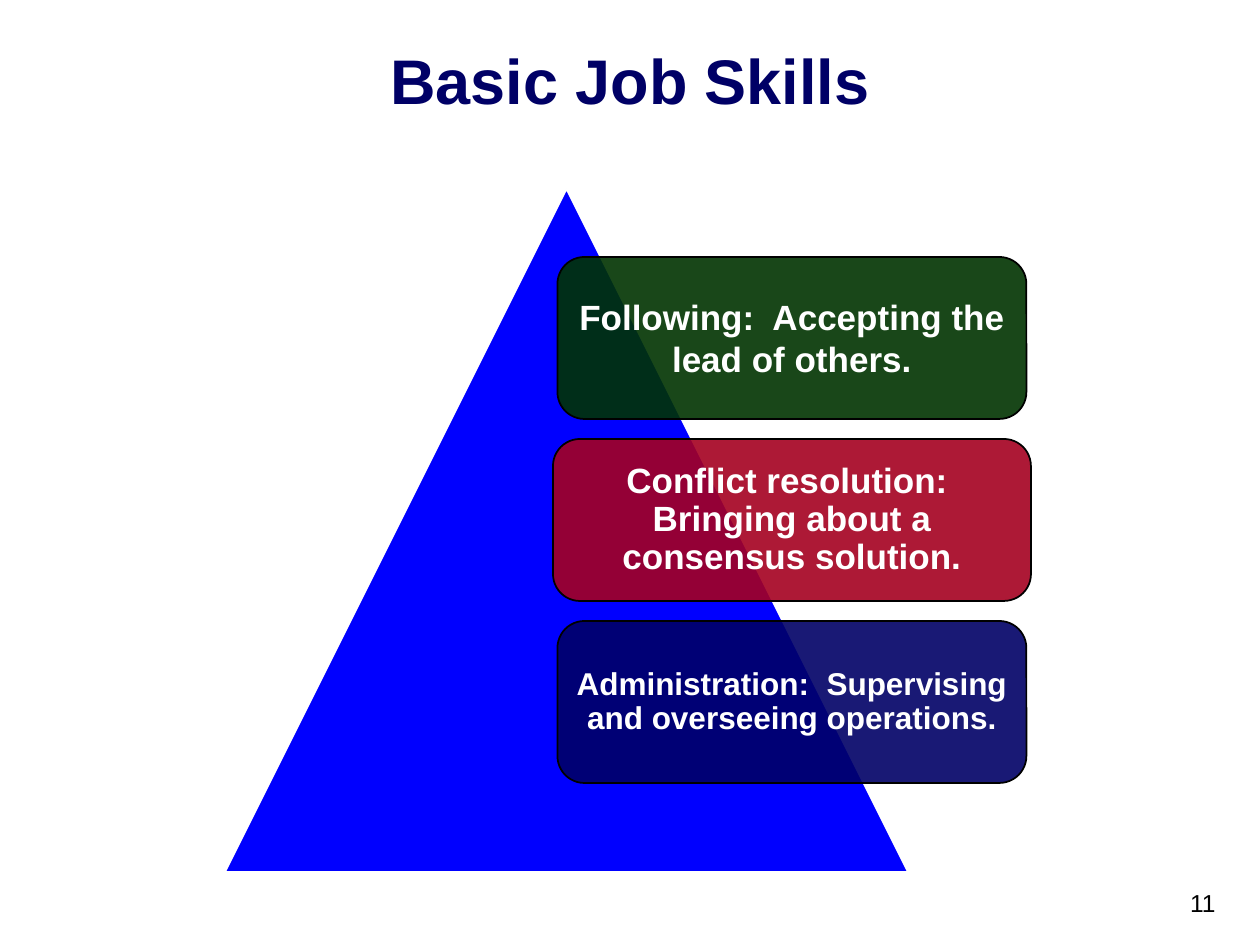
"""Build the Basic Job Skills slide: three skill cards over a pyramid."""
from lxml.etree import SubElement
from pptx import Presentation
from pptx.dml.color import RGBColor
from pptx.enum.shapes import MSO_SHAPE as Shape
from pptx.enum.text import MSO_ANCHOR as Anchor, PP_ALIGN as Align
from pptx.oxml.ns import qn
from pptx.util import Pt

FONT = "Arial"
EMU_PER_PX = 914400 / 126
WHITE = RGBColor(0xFF, 0xFF, 0xFF)
BLACK = RGBColor(0x00, 0x00, 0x00)
BLUE = RGBColor(0x00, 0x00, 0xFF)
NAVY = RGBColor(0x00, 0x00, 0x66)
GREEN = RGBColor(0x00, 0x33, 0x00)
RED = RGBColor(0xA5, 0x00, 0x21)

TITLE = "Basic Job Skills"
PAGE_NUMBER = "11"
CARDS = [
    {"text": "Following:  Accepting the lead of others.",
     "fill": GREEN, "width": 469, "size": 20, "spacing": 1.0, "inset": 10},
    {"text": "Conflict resolution:  Bringing about a consensus solution.",
     "fill": RED, "width": 478, "size": 20, "spacing": 0.9, "inset": 10},
    {"text": "Administration:  Supervising and overseeing operations.",
     "fill": NAVY, "width": 469, "size": 18, "spacing": 0.9, "inset": 9},
]
CARD_CENTER, CARD_TOP, CARD_HEIGHT, CARD_GAP = 792, 257, 162, 20
CARD_OPACITY = 90


def px(*lengths):
    return [round(length * EMU_PER_PX) for length in lengths]


def write(box, text, size, color, align, anchor, bold=False, spacing=None):
    frame = box.text_frame
    frame.word_wrap = True
    frame.vertical_anchor = anchor
    para = frame.paragraphs[0]
    para.alignment = align
    para.line_spacing = spacing
    span = para.add_run()
    span.text = text
    span.font.name = FONT
    span.font.size = Pt(size)
    span.font.bold = bold
    span.font.color.rgb = color


def add_outlined(page, kind, bounds, fill, line):
    shape = page.shapes.add_shape(kind, *px(*bounds))
    shape.shadow.inherit = False
    shape.fill.solid()
    shape.fill.fore_color.rgb = fill
    shape.line.color.rgb = line
    shape.line.width = Pt(1)
    return shape


def add_card(page, row, card):
    left = CARD_CENTER - card["width"] / 2
    top = CARD_TOP + row * (CARD_HEIGHT + CARD_GAP)
    box = add_outlined(page, Shape.ROUNDED_RECTANGLE,
                       (left, top, card["width"], CARD_HEIGHT), card["fill"], BLACK)
    color = box.fill._xPr.find(qn("a:solidFill")).find(qn("a:srgbClr"))
    SubElement(color, qn("a:alpha")).set("val", str(CARD_OPACITY * 1000))
    frame = box.text_frame
    (inset,) = px(card["inset"])
    frame.margin_left = frame.margin_right = inset
    frame.margin_top = frame.margin_bottom = inset
    write(box, card["text"], card["size"], WHITE, Align.CENTER, Anchor.MIDDLE,
          bold=True, spacing=card["spacing"])


def main():
    deck = Presentation()
    deck.slide_width, deck.slide_height = px(1260, 945)
    page = deck.slides.add_slide(deck.slide_layouts[6])

    title = page.shapes.add_textbox(*px(0, 0, 1260, 158))
    write(title, TITLE, 36, NAVY, Align.CENTER, Anchor.MIDDLE, bold=True)
    number = page.shapes.add_textbox(*px(966, 882, 262, 63))
    write(number, PAGE_NUMBER, 14, BLACK, Align.RIGHT, Anchor.TOP)

    add_outlined(page, Shape.ISOSCELES_TRIANGLE, (225, 189, 683, 683), BLUE, WHITE)
    for row, card in enumerate(CARDS):
        add_card(page, row, card)

    deck.save("out.pptx")


if __name__ == "__main__":
    main()
